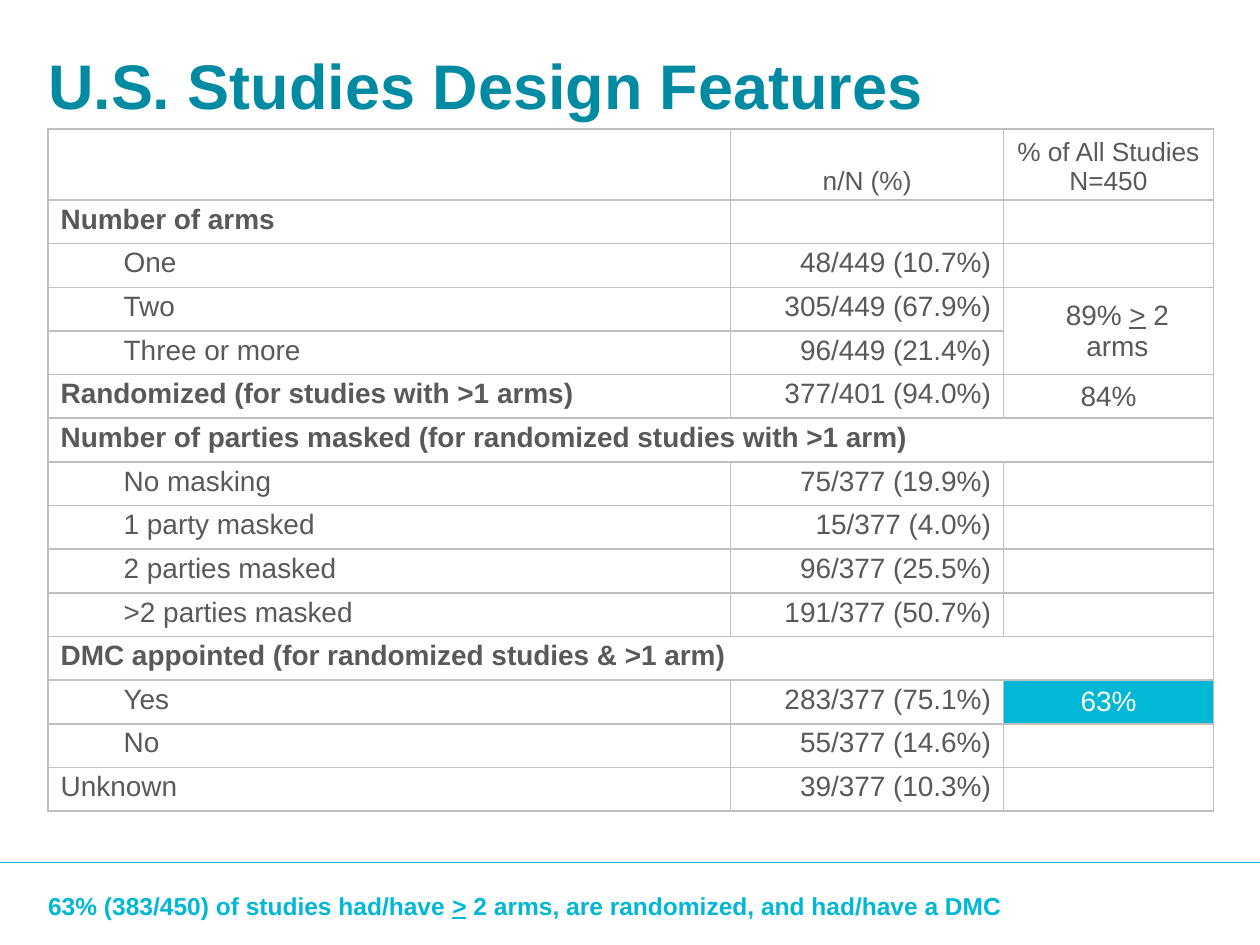
from lxml import etree
from pptx import Presentation
from pptx import util as u
from pptx.dml.color import RGBColor
from pptx.enum import shapes, text
from pptx.oxml import ns

Cm, Pt = u.Cm, u.Pt
FONT = "Arial"
COLORS = {"white": "FFFFFF", "body": "58595B", "title": "008BA2",
          "accent": "00B7D5", "border": "BFBFBF"}
LEFT, CENTER, RIGHT = text.PP_ALIGN.LEFT, text.PP_ALIGN.CENTER, text.PP_ALIGN.RIGHT
TOP, MIDDLE, BOTTOM = text.MSO_ANCHOR.TOP, text.MSO_ANCHOR.MIDDLE, text.MSO_ANCHOR.BOTTOM

COLUMN_WIDTHS = [13.76, 5.5, 4.23]
HEADER_HEIGHT, ROW_HEIGHT = 1.43, 0.88
HEADINGS = ["", "n/N (%)", "% of All Studies N=450"]
# Kind of row, label, count, share of all studies
ROWS = [
    ("group", "Number of arms", "", ""),
    ("item", "One", "48/449 (10.7%)", ""),
    ("item", "Two", "305/449 (67.9%)", "89% |>| 2 arms"),
    ("item", "Three or more", "96/449 (21.4%)", ""),
    ("group", "Randomized (for studies with >1 arms)", "377/401 (94.0%)", "84%"),
    ("band", "Number of parties masked (for randomized studies with >1 arm)", "", ""),
    ("item", "No masking", "75/377 (19.9%)", ""),
    ("item", "1 party masked", "15/377 (4.0%)", ""),
    ("item", "2 parties masked", "96/377 (25.5%)", ""),
    ("item", ">2 parties masked", "191/377 (50.7%)", ""),
    ("band", "DMC appointed (for randomized studies & >1 arm)", "", ""),
    ("item", "Yes", "283/377 (75.1%)", "63%"),
    ("item", "No", "55/377 (14.6%)", ""),
    ("plain", "Unknown", "39/377 (10.3%)", ""),
]
ARMS_ROW, DMC_ROW = 3, 12


def color(name):
    return RGBColor.from_string(COLORS[name])


def add_spans(para, words, size, ink, bold=False):
    """Add runs to a paragraph; every second part between bars is underlined."""
    for number, part in enumerate(words.split("|")):
        span = para.add_run()
        span.text = part
        span.font.name, span.font.size, span.font.bold = FONT, Pt(size), bold
        span.font.color.rgb = color(ink)
        if number % 2:
            span.font.underline = True


def add_text(page, box, words, size, ink, anchor, top_inset=0):
    frame = page.shapes.add_textbox(*map(Cm, box)).text_frame
    frame.word_wrap = True
    frame.vertical_anchor = anchor
    frame.margin_left = frame.margin_right = frame.margin_bottom = 0
    frame.margin_top = Cm(top_inset)
    add_spans(frame.paragraphs[0], words, size, ink, bold=True)


def set_borders(cell):
    properties = cell._tc.get_or_add_tcPr()
    for index, side in enumerate(("lnL", "lnR", "lnT", "lnB")):
        line = etree.Element(ns.qn(f"a:{side}"), w=str(Pt(1)))
        fill = etree.SubElement(line, ns.qn("a:solidFill"))
        etree.SubElement(fill, ns.qn("a:srgbClr"), val=COLORS["border"])
        properties.insert(index, line)


def fill_cell(cell, words, size=16, align=LEFT, anchor=TOP, indent=0,
              bold=False, ink="body", back="white"):
    cell.fill.solid()
    cell.fill.fore_color.rgb = color(back)
    set_borders(cell)
    cell.margin_top = cell.margin_bottom = Cm(0.08)
    cell.vertical_anchor = anchor
    para = cell.text_frame.paragraphs[0]
    para.alignment = align
    if not words:
        etree.SubElement(para._p, ns.qn("a:endParaRPr"), sz="1200")
        return
    para.space_after = Pt(1)
    para.space_before = Pt(1 if cell.is_merge_origin else 0)
    if indent:
        para._p.get_or_add_pPr().set("marL", str(Cm(indent)))
    add_spans(para, words, size, ink, bold)


def add_design_table(page, left, top):
    height = HEADER_HEIGHT + ROW_HEIGHT * len(ROWS)
    table = page.shapes.add_table(
        len(ROWS) + 1, len(COLUMN_WIDTHS), Cm(left), Cm(top),
        Cm(sum(COLUMN_WIDTHS)), Cm(height)).table
    table.first_row = table.horz_banding = False
    for column, width in zip(table.columns, COLUMN_WIDTHS):
        column.width = Cm(width)
    for number, row in enumerate(table.rows):
        row.height = Cm(ROW_HEIGHT if number else HEADER_HEIGHT)

    table.cell(ARMS_ROW, 2).merge(table.cell(ARMS_ROW + 1, 2))
    for number, heading in enumerate(HEADINGS):
        fill_cell(table.cell(0, number), heading, 15, CENTER, BOTTOM)
    for number, (kind, label, count, share) in enumerate(ROWS, start=1):
        if kind == "band":
            table.cell(number, 0).merge(table.cell(number, 2))
        fill_cell(table.cell(number, 0), label, bold=kind in ("group", "band"),
                  indent=1.27 if kind == "item" else 0)
        fill_cell(table.cell(number, 1), count, align=RIGHT)
        marked = number == DMC_ROW
        fill_cell(table.cell(number, 2), share, align=CENTER, anchor=MIDDLE,
                  indent=0.36 if number == ARMS_ROW else 0,
                  ink="white" if marked else "body",
                  back="accent" if marked else "white")


def add_footer(page, left, top, width, height):
    band = page.shapes.add_shape(shapes.MSO_SHAPE.RECTANGLE,
                                 *map(Cm, (left, top, width, height)))
    band.shadow.inherit = False
    band.fill.solid()
    band.fill.fore_color.rgb = color("white")
    band.line.fill.background()
    level = Cm(top + 0.04)
    rule = page.shapes.add_connector(shapes.MSO_CONNECTOR.STRAIGHT,
                                     Cm(left), level, Cm(left + width), level)
    rule.line.color.rgb = color("accent")
    rule.line.width = Pt(0.75)
    etree.SubElement(rule._element.spPr, ns.qn("a:effectLst"))
    add_text(page, (left + 0.97, top + 0.33, 21.16, 1.14),
             "63% (383/450) of studies had/have |>| 2 arms, are randomized, "
             "and had/have a DMC", 14, "accent", MIDDLE)


def main():
    deck = Presentation()
    deck.slide_width, deck.slide_height = Cm(25.4), Cm(19.05)
    page = deck.slides.add_slide(deck.slide_layouts[6])
    add_footer(page, 0, 17.35, 25.4, 1.7)
    add_design_table(page, 0.97, 2.6)
    add_text(page, (0.97, 0.84, 23.5, 2.18), "U.S. Studies Design Features",
             36, "title", TOP, top_inset=0.1)
    deck.save("out.pptx")


if __name__ == "__main__":
    main()
